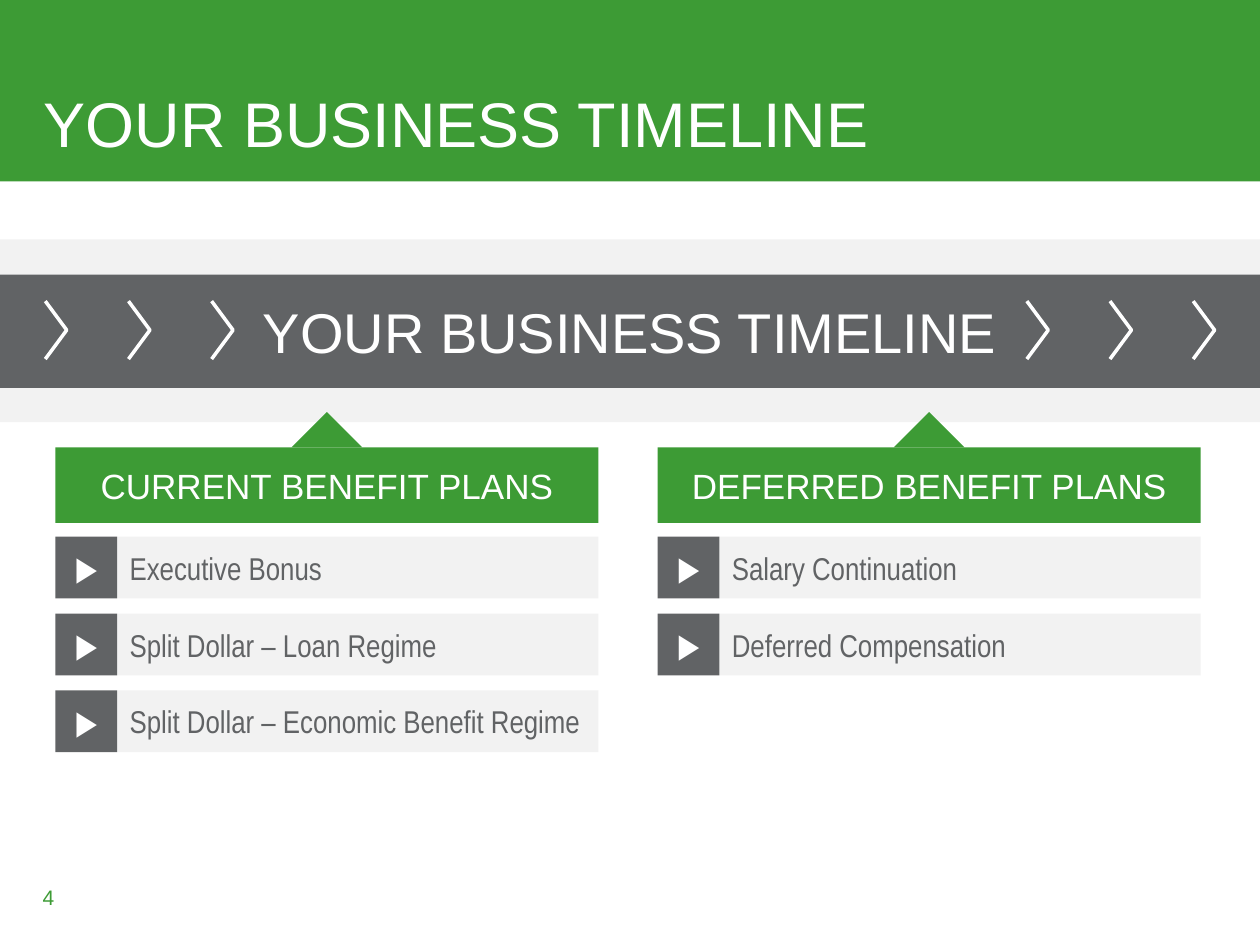
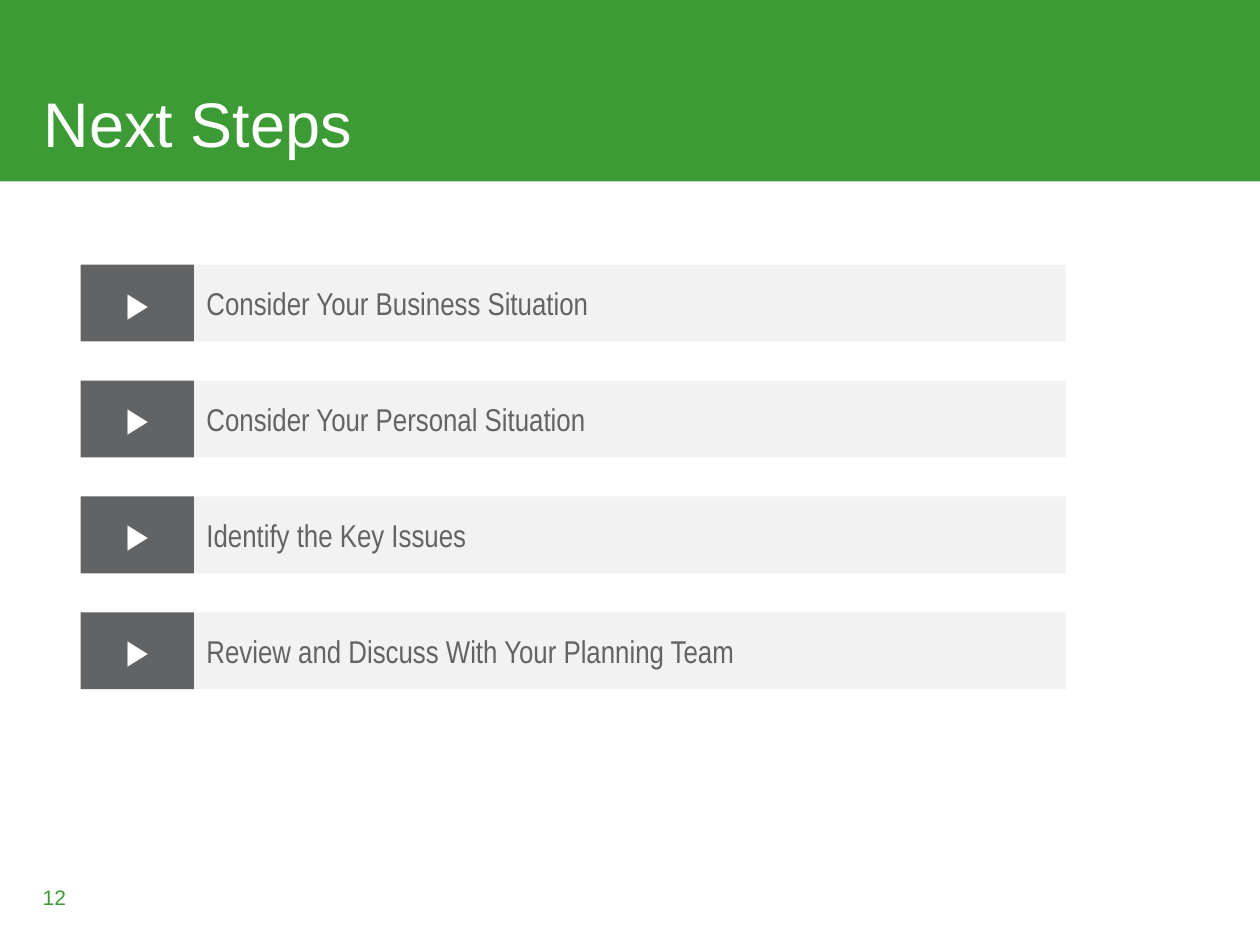
"""Build the business timeline and next steps slides."""
from dataclasses import dataclass

from pptx import Presentation
from pptx import util as u
from pptx.dml import color
from pptx.enum import shapes, text
from pptx.shapes.autoshape import Shape
from pptx.slide import Slide

COLORS = {"green": "3D9B35", "gray": "616365", "light": "F2F2F2", "white": "FFFFFF"}
FORMATS = {
    "title": {"name": "Arial", "size": u.Pt(36), "color": "white"},
    "band": {"name": "Arial", "size": u.Pt(32), "color": "white"},
    "heading": {"name": "Arial", "size": u.Pt(20), "color": "white"},
    "item": {"name": "Arial Narrow", "size": u.Pt(18), "color": "gray"},
    "marker": {"name": "Arial Narrow", "size": u.Pt(20), "color": "white"},
    "number": {"name": "Arial", "size": u.Pt(12), "color": "green"},
}
SLIDE_WIDTH = 10
RECTANGLE = shapes.MSO_SHAPE.RECTANGLE
TRIANGLE = shapes.MSO_SHAPE.ISOSCELES_TRIANGLE
LEFT, CENTER = text.PP_ALIGN.LEFT, text.PP_ALIGN.CENTER
MIDDLE, BOTTOM = text.MSO_ANCHOR.MIDDLE, text.MSO_ANCHOR.BOTTOM


@dataclass(frozen=True)
class Box:
    left: float
    top: float
    width: float
    height: float

    def lengths(self) -> list[u.Length]:
        return [u.Inches(side) for side in (self.left, self.top, self.width, self.height)]


@dataclass(frozen=True)
class ItemList:
    left: float
    top: float
    marker_width: float
    item_width: float
    height: float
    gap: float
    items: tuple[str, ...]


@dataclass(frozen=True)
class BenefitColumn:
    left: float
    heading: str
    plans: tuple[str, ...]


BENEFIT_COLUMNS = (
    BenefitColumn(0.44, "CURRENT BENEFIT PLANS", (
        "Executive Bonus",
        "Split Dollar – Loan Regime",
        "Split Dollar – Economic Benefit Regime",
    )),
    BenefitColumn(5.22, "DEFERRED BENEFIT PLANS", (
        "Salary Continuation",
        "Deferred Compensation",
    )),
)
NEXT_STEPS = ItemList(0.64, 2.1, 0.9, 6.92, 0.61, 0.31, (
    "Consider Your Business Situation",
    "Consider Your Personal Situation",
    "Identify the Key Issues",
    "Review and Discuss With Your Planning Team",
))


def rgb(name: str) -> color.RGBColor:
    return color.RGBColor.from_string(COLORS[name])


def write(shape: Shape, words: str, style: str, align: text.PP_ALIGN = LEFT,
          anchor: text.MSO_ANCHOR = MIDDLE, spacing: float = 1.0) -> None:
    frame = shape.text_frame
    frame.text = words
    paragraph = frame.paragraphs[0]
    font = paragraph.runs[0].font
    settings = (
        (frame, {"word_wrap": True, "vertical_anchor": anchor}),
        (paragraph, {"alignment": align, "line_spacing": spacing}),
        (font, {key: value for key, value in FORMATS[style].items() if key != "color"}),
    )
    for target, values in settings:
        for key, value in values.items():
            setattr(target, key, value)
    font.color.rgb = rgb(FORMATS[style]["color"])


def add_block(slide: Slide, box: Box, fill: str,
              kind: shapes.MSO_SHAPE = RECTANGLE) -> Shape:
    shape = slide.shapes.add_shape(kind, *box.lengths())
    shape.shadow.inherit = False
    shape.fill.solid()
    shape.fill.fore_color.rgb = rgb(fill)
    shape.line.fill.background()
    return shape


def add_chevron(slide: Slide, left: float) -> None:
    top, width, height = 2.39, 0.17, 0.46
    builder = slide.shapes.build_freeform(u.Inches(left), u.Inches(top))
    builder.add_line_segments([
        (u.Inches(left + width), u.Inches(top + height / 2)),
        (u.Inches(left), u.Inches(top + height)),
    ], close=False)
    shape = builder.convert_to_shape()
    shape.shadow.inherit = False
    shape.fill.background()
    shape.line.color.rgb = rgb("white")
    shape.line.width = u.Pt(2)


def add_items(slide: Slide, rows: ItemList) -> None:
    for index, words in enumerate(rows.items):
        top = rows.top + index * (rows.height + rows.gap)
        item = Box(rows.left + rows.marker_width, top, rows.item_width, rows.height)
        marker = Box(rows.left, top, rows.marker_width, rows.height)
        write(add_block(slide, item, "light"), words, "item")
        write(add_block(slide, marker, "gray"), "▶", "marker", CENTER)


def add_benefit_column(slide: Slide, column: BenefitColumn) -> None:
    heading = Box(column.left, 3.55, 4.31, 0.6)
    pointer_width, pointer_height = 0.56, 0.28
    pointer = Box(heading.left + (heading.width - pointer_width) / 2,
                  heading.top - pointer_height, pointer_width, pointer_height)
    write(add_block(slide, heading, "green"), column.heading, "heading", CENTER)
    add_items(slide, ItemList(column.left, 4.26, 0.49, 3.82, 0.49, 0.12, column.plans))
    add_block(slide, pointer, "green", TRIANGLE)


def add_base_slide(presentation: Presentation, title: str, number: int) -> Slide:
    slide = presentation.slides.add_slide(presentation.slide_layouts[6])
    add_block(slide, Box(0, 0, SLIDE_WIDTH, 1.44), "green")
    title_box = slide.shapes.add_textbox(*Box(0.25, 0.16, 9.5, 1.17).lengths())
    write(title_box, title, "title", anchor=BOTTOM, spacing=0.9)
    number_box = slide.shapes.add_textbox(*Box(0.24, 6.92, 0.56, 0.4).lengths())
    write(number_box, str(number), "number")
    return slide


def build_timeline(presentation: Presentation) -> None:
    title = "YOUR BUSINESS TIMELINE"
    slide = add_base_slide(presentation, title, 4)
    add_block(slide, Box(0, 1.9, SLIDE_WIDTH, 1.45), "light")
    band = add_block(slide, Box(0, 2.18, SLIDE_WIDTH, 0.9), "gray")
    write(band, title, "band", CENTER)
    for group_left in (0.36, 8.15):
        for index in range(3):
            add_chevron(slide, group_left + index * 0.66)
    for column in BENEFIT_COLUMNS:
        add_benefit_column(slide, column)


def build_next_steps(presentation: Presentation) -> None:
    add_items(add_base_slide(presentation, "Next Steps", 12), NEXT_STEPS)


def main() -> None:
    presentation = Presentation()
    presentation.slide_width = u.Inches(SLIDE_WIDTH)
    presentation.slide_height = u.Inches(7.5)
    build_timeline(presentation)
    build_next_steps(presentation)
    presentation.save("out.pptx")


if __name__ == "__main__":
    main()
